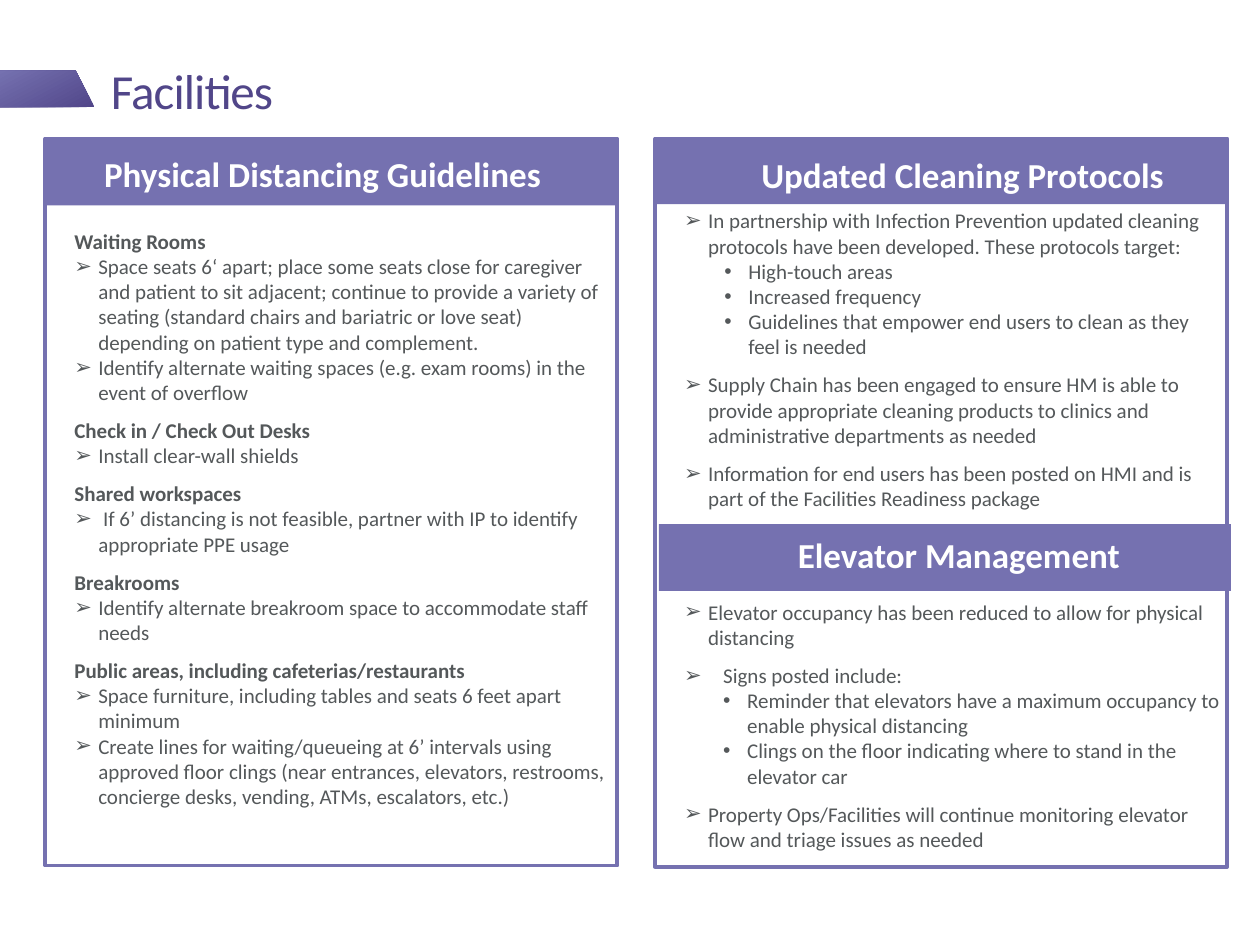
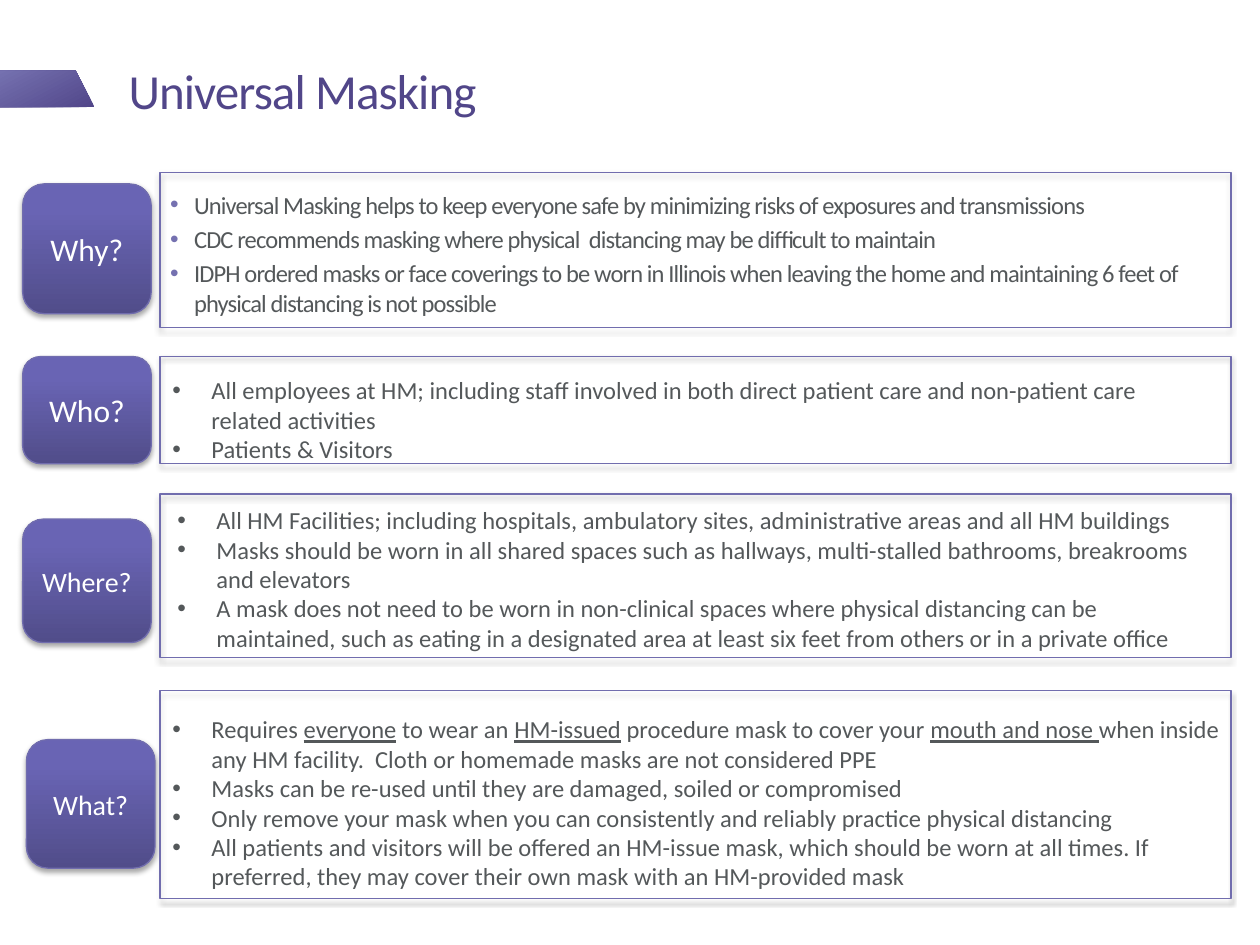
from dataclasses import dataclass

from lxml import etree
from pptx import Presentation
from pptx import util as u
from pptx.dml.color import RGBColor
from pptx.enum import shapes, text
from pptx.oxml import ns

PX = 9144  # 100 px to the inch
FONT = "Calibri"
HUES = {
    "band": "7571B0", "title": "514689", "text": "54585A", "white": "FFFFFF",
    "edge": "716DAE", "low": "514D8A", "mid": "6964B4", "top": "6963B6",
    "shade": "000000",
}
RECT = shapes.MSO_SHAPE.RECTANGLE
ROUND = shapes.MSO_SHAPE.ROUNDED_RECTANGLE
LEFT, MID = text.PP_ALIGN.LEFT, text.PP_ALIGN.CENTER
ANCHOR = text.MSO_ANCHOR
GAP = 7.3


@dataclass(frozen=True)
class Box:
    x: int
    y: int
    w: int
    h: int

    def emu(self) -> list[int]:
        return [n * PX for n in (self.x, self.y, self.w, self.h)]


@dataclass(frozen=True)
class Style:
    size: float = 12
    hue: str = "text"
    bold: bool = False
    track: int = 0


@dataclass(frozen=True)
class Item:
    """One paragraph; words between underscores are underlined."""
    words: str
    mark: str = "➢"
    pad: int = 19
    hang: int = 19
    gap: float = 0
    bold: bool = False


@dataclass(frozen=True)
class Panel:
    name: str
    band: Box
    head: Box


@dataclass(frozen=True)
class Row:
    name: str
    size: int
    tile: Box
    frame: Box
    body: Box
    items: list[Item]


def rgb(hue: str) -> RGBColor:
    return RGBColor.from_string(HUES[hue])


def node(parent, tag: str, **attrs):
    item = etree.SubElement(parent, ns.qn("a:" + tag))
    for key, val in attrs.items():
        item.set(key, str(val))
    return item


def place(shape, box: Box) -> None:
    shape.left, shape.top, shape.width, shape.height = box.emu()


def setup(frame, anchor, pads: tuple[int, int, int, int]) -> None:
    frame.word_wrap = True
    frame.auto_size = text.MSO_AUTO_SIZE.NONE
    frame.vertical_anchor = anchor
    (frame.margin_left, frame.margin_top,
     frame.margin_right, frame.margin_bottom) = [n * PX for n in pads]


def write(para, words: str, style: Style) -> None:
    for i, part in enumerate(words.split("_")):
        if not part:
            continue
        run = para.add_run()
        run.text = part
        font = run.font
        font.name, font.size, font.bold = FONT, u.Pt(style.size), style.bold
        font.color.rgb = rgb(style.hue)
        if i % 2:
            font.underline = True
        if style.track:
            run._r.get_or_add_rPr().set("spc", str(style.track))


def label(frame, words: str, style: Style, align, lead: float = 1.0) -> None:
    para = frame.paragraphs[0]
    para.alignment, para.line_spacing = align, lead
    write(para, words, style)


def fill_list(frame, items: list[Item], size: int = 12, track: int = 0,
              dot: str = "text") -> None:
    for i, item in enumerate(items):
        para = frame.paragraphs[0] if i == 0 else frame.add_paragraph()
        props = para._p.get_or_add_pPr()
        props.set("marL", str(item.pad * PX))
        props.set("indent", str(-item.hang * PX))
        if item.mark:
            node(node(props, "buClr"), "srgbClr", val=HUES[dot])
            node(props, "buFont", typeface="Arial")
            node(props, "buChar", char=item.mark)
        else:
            node(props, "buNone")
        para.alignment, para.line_spacing = LEFT, 1.0
        para.space_before = u.Pt(item.gap)
        write(para, item.words, Style(size, bold=item.bold, track=track))


def blend(shape, stops: list[tuple[int, str]], angle: int) -> None:
    """Give the shape a linear gradient fill."""
    shape.fill.background()
    props = shape._element.spPr
    grad = etree.Element(ns.qn("a:gradFill"), rotWithShape="1")
    inner = node(grad, "gsLst")
    for pos, hue in stops:
        node(node(inner, "gs", pos=pos * 1000), "srgbClr", val=HUES[hue])
    node(grad, "lin", ang=angle * 60000, scaled=0)
    props.replace(props.find(ns.qn("a:noFill")), grad)


def shade(shape) -> None:
    """Give the shape a soft shadow below it."""
    effects = shape._element.spPr.find(ns.qn("a:effectLst"))
    outer = node(effects, "outerShdw", blurRad=u.Pt(3.1), dist=u.Pt(1.8),
                 dir=5400000, rotWithShape=0)
    node(node(outer, "srgbClr", val=HUES["shade"]), "alpha", val=35000)


def block(slide, kind, box: Box, fill: str = "", edge: str = "",
          width: float = 0.75):
    shape = slide.shapes.add_shape(kind, *box.emu())
    shape.shadow.inherit = False
    if fill:
        shape.fill.solid()
        shape.fill.fore_color.rgb = rgb(fill)
    else:
        shape.fill.background()
    if edge:
        shape.line.color.rgb, shape.line.width = rgb(edge), u.Pt(width)
    else:
        shape.line.fill.background()
    return shape


def textbox(slide, box: Box, anchor, pads: tuple[int, int, int, int]):
    frame = slide.shapes.add_textbox(*box.emu()).text_frame
    setup(frame, anchor, pads)
    return frame


def body(slide, idx: int, box: Box, anchor, pads=(0, 0, 0, 0)):
    holder = slide.placeholders[idx]
    place(holder, box)
    setup(holder.text_frame, anchor, pads)
    return holder.text_frame


def start(deck, layout: int, name: str, box: Box):
    """Add a slide with the wedge and the title."""
    slide = deck.slides.add_slide(deck.slide_layouts[layout])
    pen = slide.shapes.build_freeform(0, 56, scale=PX)
    pen.add_line_segments([(60, 56), (75, 85), (0, 85)], close=True)
    wedge = pen.convert_to_shape()
    wedge.shadow.inherit = False
    wedge.line.fill.background()
    blend(wedge, [(0, "title"), (100, "band")], 242)
    title = slide.shapes.title
    place(title, box)
    setup(title.text_frame, ANCHOR.BOTTOM, (0, 0, 10, 5))
    label(title.text_frame, name, Style(28, "title", track=-50), LEFT, 0.85)
    return slide


def head(words: str, gap: float = GAP) -> Item:
    return Item(words, "", 0, 0, gap, True)


def sub(words: str, pad: int = 51) -> Item:
    return Item(words, "•", pad)


def dots(*lines: str) -> list[Item]:
    return [Item(line, "•", 31, 31) for line in lines]


PANELS = [
    Panel("Physical Distancing Guidelines",
          Box(36, 110, 454, 53), Box(35, 119, 442, 41)),
    Panel("Updated Cleaning Protocols",
          Box(521, 109, 454, 53), Box(543, 120, 442, 41)),
    Panel("Elevator Management",
          Box(523, 416, 454, 53), Box(540, 422, 442, 41)),
]
BORDERS = [Box(36, 110, 454, 577), Box(520, 110, 454, 578)]

SPACING = [
    head("Waiting Rooms", 0),
    Item("Space seats 6‘ apart; place some seats close for caregiver and "
         "patient to sit adjacent; continue to provide a variety of seating "
         "(standard chairs and bariatric or love seat) depending on patient "
         "type and complement."),
    Item("Identify alternate waiting spaces (e.g. exam rooms) in the event "
         "of overflow"),
    head("Check in / Check Out Desks"),
    Item("Install clear-wall shields"),
    head("Shared workspaces"),
    Item(" If 6’ distancing is not feasible, partner with IP to identify "
         "appropriate PPE usage"),
    head("Breakrooms"),
    Item("Identify alternate breakroom space to accommodate staff needs"),
    head("Public areas, including cafeterias/restaurants"),
    Item("Space furniture, including tables and seats 6 feet apart minimum"),
    Item("Create lines for waiting/queueing at 6’ intervals using approved "
         "floor clings (near entrances, elevators, restrooms, concierge "
         "desks, vending, ATMs, escalators, etc.)"),
]
UPKEEP = [
    Item("In partnership with Infection Prevention updated cleaning "
         "protocols have been developed. These protocols target:"),
    sub("High-touch areas"),
    sub("Increased frequency"),
    sub("Guidelines that empower end users to clean as they feel is needed"),
    Item("Supply Chain has been engaged to ensure HM is able to provide "
         "appropriate cleaning products to clinics and administrative "
         "departments as needed", gap=GAP),
    Item("Information for end users has been posted on HMI and is part of "
         "the Facilities Readiness package", gap=GAP),
    Item("Elevator occupancy has been reduced to allow for physical "
         "distancing", gap=50.5),
    Item("Signs posted include:", pad=31, hang=31, gap=GAP),
    sub("Reminder that elevators have a maximum occupancy to enable "
        "physical distancing", 50),
    sub("Clings on the floor indicating where to stand in the elevator car",
        50),
    Item("Property Ops/Facilities will continue monitoring elevator flow "
         "and triage issues as needed", gap=GAP),
]
ROWS = [
    Row("Why?", 18, Box(18, 146, 102, 103), Box(127, 137, 850, 123),
        Box(135, 143, 821, 121), [
            Item("Universal Masking helps to keep everyone safe by "
                 "minimizing risks of exposures and transmissions", "•"),
            Item("CDC recommends masking where physical  distancing may be "
                 "difficult to maintain", "•", gap=2.8),
            Item("IDPH ordered masks or face coverings to be worn in "
                 "Illinois when leaving the home and maintaining 6 feet of "
                 "physical distancing is not possible", "•", gap=2.8)]),
    Row("Who?", 18, Box(18, 283, 102, 85), Box(127, 283, 850, 85),
        Box(127, 293, 799, 81), dots(
            "All employees at HM; including staff involved in both direct "
            "patient care and non-patient care related activities",
            "Patients & Visitors")),
    Row("Where?", 16, Box(18, 412, 102, 98), Box(127, 392, 850, 130),
        Box(131, 396, 828, 128), dots(
            "All HM Facilities; including hospitals, ambulatory sites, "
            "administrative areas and all HM buildings",
            "Masks should be worn in all shared spaces such as hallways, "
            "multi-stalled bathrooms, breakrooms and elevators",
            "A mask does not need to be worn in non-clinical spaces where "
            "physical distancing can be maintained, such as eating in a "
            "designated area at least six feet from others or in a private "
            "office")),
    Row("What?", 16, Box(21, 587, 102, 102), Box(127, 548, 850, 165),
        Box(127, 562, 858, 151), dots(
            "Requires _everyone_ to wear an _HM-issued_ procedure mask to "
            "cover your _mouth and nose _when inside any HM facility.  Cloth "
            "or homemade masks are not considered PPE",
            "Masks can be re-used until they are damaged, soiled or "
            "compromised",
            "Only remove your mask when you can consistently and reliably "
            "practice physical distancing",
            "All patients and visitors will be offered an HM-issue mask, "
            "which should be worn at all times. If preferred, they may cover "
            "their own mask with an HM-provided mask")),
]


def sites(deck) -> None:
    slide = start(deck, 3, "Facilities", Box(88, 17, 844, 83))
    for panel in PANELS:
        block(slide, RECT, panel.band, "band")
        frame = textbox(slide, panel.head, ANCHOR.MIDDLE, (8, 4, 8, 4))
        label(frame, panel.name, Style(20, "white", True), MID, 0.9)
    for box in BORDERS:
        block(slide, RECT, box, edge="band", width=2.25)
    fill_list(body(slide, 1, Box(59, 163, 427, 497), ANCHOR.MIDDLE), SPACING)
    fill_list(body(slide, 2, Box(543, 165, 427, 520), ANCHOR.TOP), UPKEEP)


def masks(deck) -> None:
    slide = start(deck, 1, "Universal Masking", Box(102, 17, 785, 83))
    for i, row in enumerate(ROWS):
        tile = block(slide, ROUND, row.tile, edge="edge")
        blend(tile, [(0, "low"), (80, "mid"), (100, "top")], 270)
        setup(tile.text_frame, ANCHOR.MIDDLE, (10, 5, 10, 5))
        label(tile.text_frame, row.name, Style(row.size, "white"), MID)
        shade(tile)
        shade(block(slide, RECT, row.frame, edge="edge"))
        if i == 0:
            frame = body(slide, 1, row.body, ANCHOR.MIDDLE, (0, 0, 10, 5))
            fill_list(frame, row.items, 14, -50, "band")
        else:
            frame = textbox(slide, row.body, ANCHOR.TOP, (10, 5, 10, 5))
            fill_list(frame, row.items, 14)


def main() -> None:
    deck = Presentation()
    deck.slide_width, deck.slide_height = 1000 * PX, 750 * PX
    sites(deck)
    masks(deck)
    deck.save("out.pptx")


if __name__ == "__main__":
    main()
